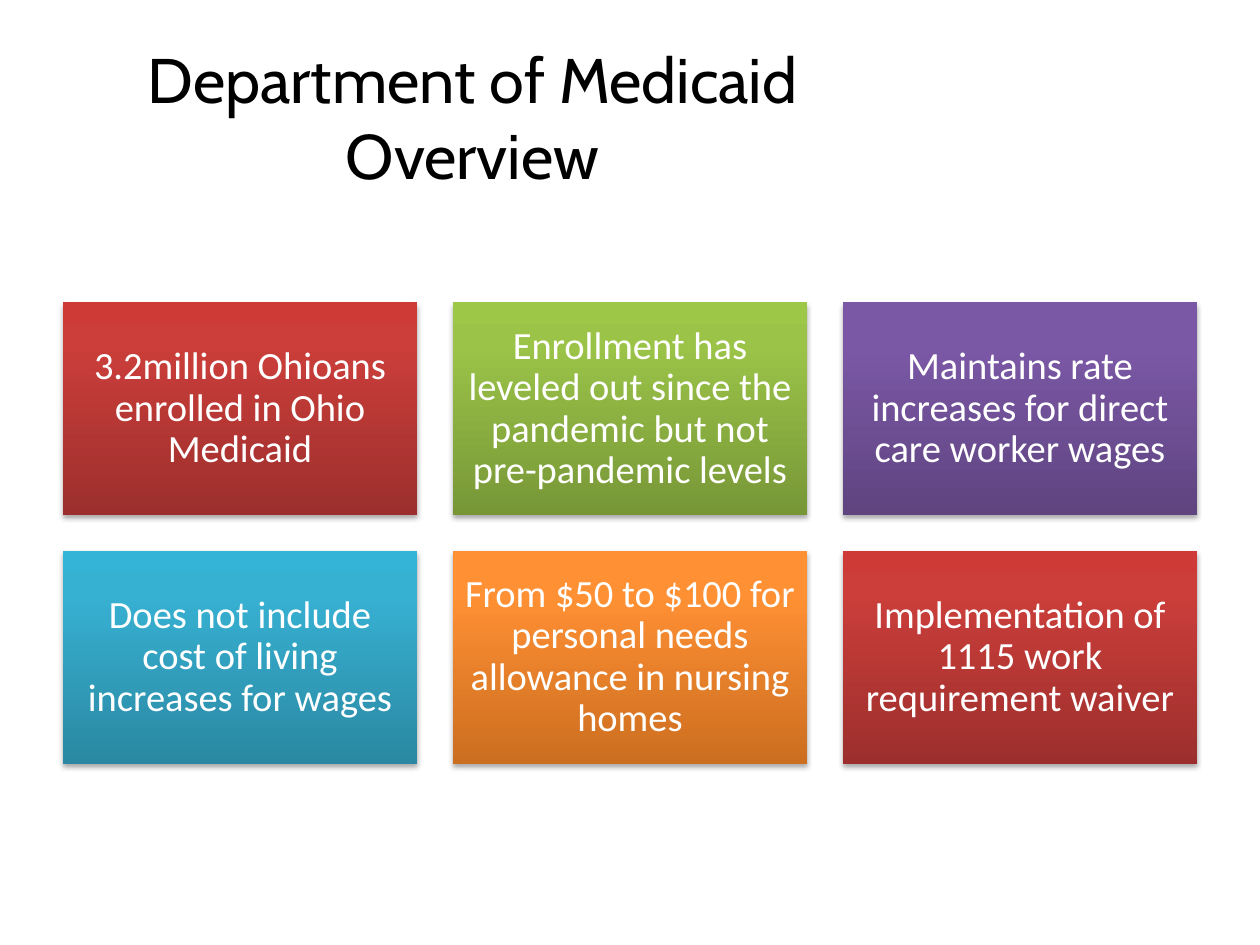
from lxml import etree
from pptx import Presentation
from pptx.dml.color import RGBColor as Rgb
from pptx.enum.shapes import MSO_SHAPE as Kind
from pptx.enum.text import MSO_ANCHOR as Anchor, MSO_AUTO_SIZE as Fit, PP_ALIGN as Align
from pptx.oxml import parse_xml
from pptx.oxml.ns import nsdecls, qn
from pptx.util import Pt

PX = 9144
COLS, ROWS = 3, 2
WIDE, HIGH = 281, 169
INSET = 9
HUES = {
    "black": "000000",
    "white": "FFFFFF",
    "red": ("9C2F2D", "CB3E3A", "CE3B37"),
    "green": ("779737", "9BC348", "9DC746"),
    "violet": ("5F4480", "7B58A6", "7C57A8"),
    "blue": ("2A88A2", "37B1D2", "34B4D6"),
    "orange": ("CC6E20", "FF9034", "FF9136"),
}
CARDS = [
    ("red", "3.2million Ohioans enrolled in Ohio Medicaid"),
    ("green", "Enrollment has leveled out since the pandemic but not pre-pandemic levels"),
    ("violet", "Maintains rate increases for direct care worker wages"),
    ("blue", "Does not include cost of living increases for wages"),
    ("orange", "From $50 to $100 for personal needs allowance in nursing homes"),
    ("red", "Implementation of 1115 work requirement waiver"),
]


def px(num):
    return round(num * PX)


def write(frame, text, face, size, hue):
    frame.word_wrap = True
    frame.vertical_anchor = Anchor.MIDDLE
    para = frame.paragraphs[0]
    para.alignment = Align.CENTER
    run = para.add_run()
    run.text = text
    font = run.font
    font.name = face
    font.size = Pt(size)
    font.color.rgb = Rgb.from_string(HUES[hue])
    return para


def shade(shape, stops):
    grad = parse_xml(f'<a:gradFill {nsdecls("a")} rotWithShape="1"><a:gsLst/>'
                     '<a:lin ang="16200000" scaled="0"/></a:gradFill>')
    for pos, hue in zip((0, 80000, 100000), stops):
        stop = etree.SubElement(grad[0], qn("a:gs"), pos=str(pos))
        etree.SubElement(stop, qn("a:srgbClr"), val=hue)
    props = shape.element.spPr
    props.find(qn("a:prstGeom")).addnext(grad)
    shape.line.fill.background()
    shape.shadow.inherit = False
    cast = etree.SubElement(props.find(qn("a:effectLst")), qn("a:outerShdw"),
                            blurRad="40000", dist="23000", dir="5400000", rotWithShape="0")
    tint = etree.SubElement(cast, qn("a:srgbClr"), val=HUES["black"])
    etree.SubElement(tint, qn("a:alpha"), val="35000")


def add_title(slide, box):
    title = slide.shapes.title
    title.left, title.top, title.width, title.height = map(px, box)
    title.text_frame.auto_size = Fit.NONE
    write(title.text_frame, "Department of Medicaid Overview", "Cabin", 36, "black")


def add_card(slide, box, hue, text):
    card = slide.shapes.add_shape(Kind.RECTANGLE, *map(px, box))
    shade(card, HUES[hue])
    frame = card.text_frame
    frame.margin_left = frame.margin_right = px(INSET)
    frame.margin_top = frame.margin_bottom = px(INSET)
    para = write(frame, text, "Calibri", 22, "white")
    para.line_spacing = 0.9


def add_grid(slide, box):
    left, top, width, height = box
    step = (width - WIDE) / (COLS - 1)
    drop = (height - HIGH) / (ROWS - 1)
    for num, (hue, text) in enumerate(CARDS):
        row, col = divmod(num, COLS)
        add_card(slide, (left + col * step, top + row * drop, WIDE, HIGH), hue, text)


def main():
    deck = Presentation()
    deck.slide_width, deck.slide_height = px(1000), px(750)
    slide = deck.slides.add_slide(deck.slide_layouts[5])
    add_title(slide, (50, 30, 650, 125))
    add_grid(slide, (50, 240, 900, 366))
    deck.save("out.pptx")


if __name__ == "__main__":
    main()
